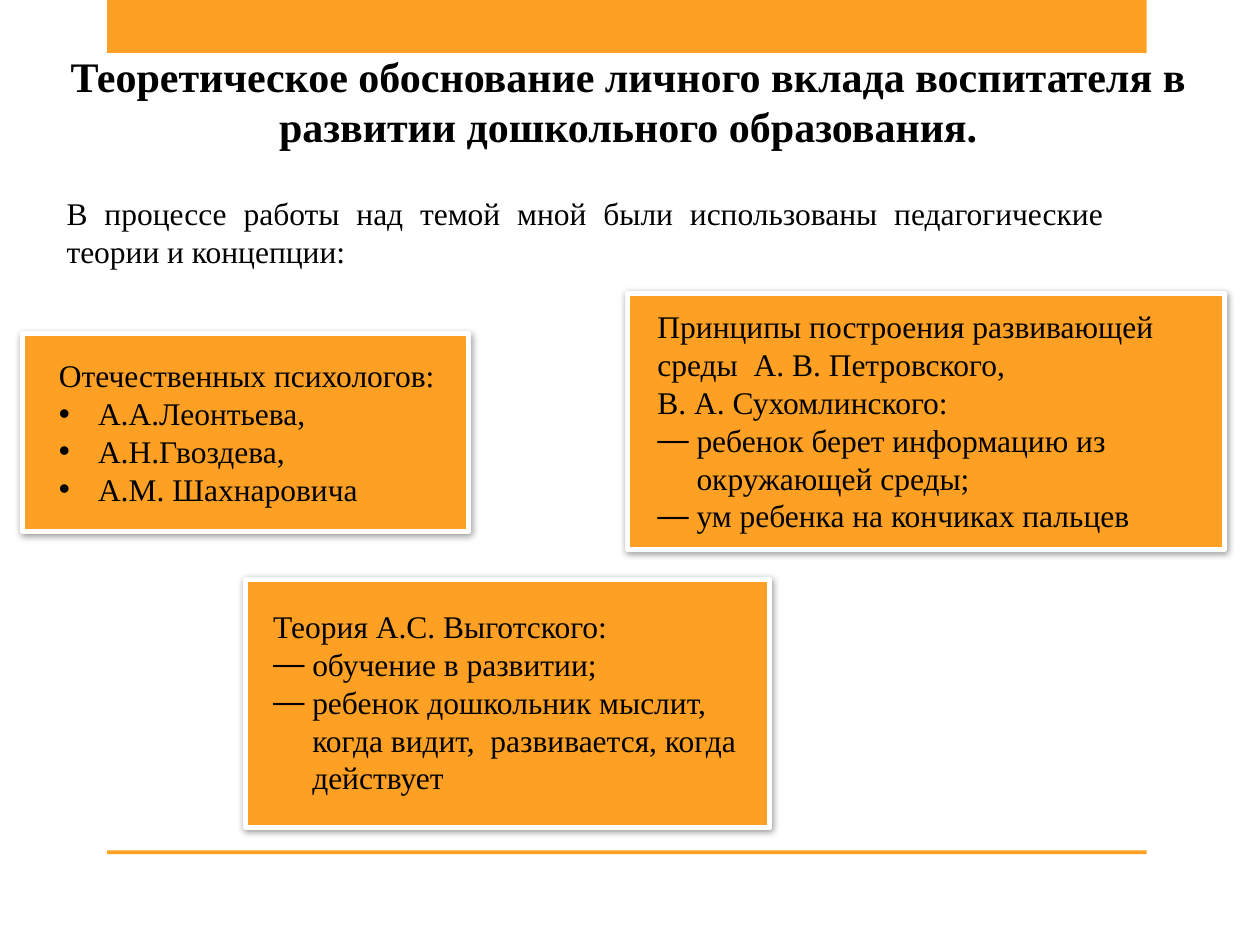
from lxml import etree
from pptx import Presentation
from pptx.dml.color import RGBColor
from pptx.enum.shapes import MSO_SHAPE as Shape
from pptx.enum.text import MSO_AUTO_SIZE as AutoSize, PP_ALIGN as Align
from pptx.oxml import parse_xml
from pptx.oxml.ns import nsdecls, qn
from pptx.util import Inches, Pt

ORANGE = RGBColor(0xFD, 0xA0, 0x23)
WHITE = RGBColor(0xFF, 0xFF, 0xFF)
BLACK = RGBColor(0x00, 0x00, 0x00)
INDENT = Inches(0.31)
SHADOW = (
    f'<a:effectLst {nsdecls("a")}>'
    f'<a:outerShdw blurRad="{Pt(4)}" dist="{Pt(1)}" dir="{88 * 60000}" rotWithShape="0">'
    '<a:srgbClr val="000000"><a:alpha val="40000"/></a:srgbClr>'
    '</a:outerShdw></a:effectLst>'
)


class SlideBuilder:
    """Holds the text style and the current slide."""

    def __init__(self, slide):
        self.s = slide
        self.font = {"name": "Times New Roman", "size": Pt(18), "bold": False}

    def rect(self, at, shapes=None):
        shapes = shapes or self.s.shapes
        sp = shapes.add_shape(Shape.RECTANGLE, *map(Inches, at))
        sp.shadow.inherit = False
        sp.fill.solid()
        sp.fill.fore_color.rgb = ORANGE
        sp.line.fill.background()
        return sp

    def text(self, at, lines, bullet="", items=(), align=Align.LEFT, shapes=None, **fmt):
        shapes = shapes or self.s.shapes
        tf = shapes.add_textbox(*map(Inches, at)).text_frame
        tf.word_wrap = True
        tf.auto_size = AutoSize.SHAPE_TO_FIT_TEXT
        for i, line in enumerate([*lines, *items]):
            p = tf.paragraphs[0] if i == 0 else tf.add_paragraph()
            p.alignment = align
            if i >= len(lines):
                self.bullet(p, bullet)
            r = p.add_run()
            r.text = line
            for key, value in {**self.font, **fmt}.items():
                setattr(r.font, key, value)
            r.font.color.rgb = BLACK

    def bullet(self, p, char):
        pPr = p._p.get_or_add_pPr()
        pPr.set("marL", str(INDENT))
        pPr.set("indent", str(-INDENT))
        etree.SubElement(pPr, qn("a:buFont"), typeface="Arial")
        etree.SubElement(pPr, qn("a:buChar"), char=char)

    def card(self, box_at, text_at, lines, bullet, items):
        shapes = self.s.shapes.add_group_shape().shapes
        sp = self.rect(box_at, shapes)
        sp.line.color.rgb = WHITE
        sp.line.width = Pt(2.75)
        spPr = sp._element.spPr
        spPr.replace(spPr.find(qn("a:effectLst")), parse_xml(SHADOW))
        self.text(text_at, lines, bullet, items, shapes=shapes)


def main():
    prs = Presentation()
    prs.slide_width, prs.slide_height = Inches(10), Inches(7.5)
    b = SlideBuilder(prs.slides.add_slide(prs.slide_layouts[6]))

    # Top band and bottom rule
    for top, height in ((0, 0.42), (6.75, 0.03)):
        b.rect((0.85, top, 8.25, height))

    # Title and introduction
    b.text((0.14, 0.35, 9.69, 0.91),
           ["Теоретическое обоснование личного вклада воспитателя в развитии "
            "дошкольного образования."],
           align=Align.CENTER, size=Pt(24), bold=True)
    b.text((0.43, 1.49, 8.43, 0.71),
           ["В процессе работы над темой мной были использованы педагогические "
            "теории и концепции:"],
           align=Align.JUSTIFY)

    # Theory cards
    b.card((0.18, 2.65, 3.54, 1.57), (0.37, 2.78, 3.36, 1.31),
           ["Отечественных психологов:"],
           "•", ["А.А.Леонтьева,", "А.Н.Гвоздева,", "А.М. Шахнаровича"])
    b.card((4.98, 2.33, 4.74, 2.03), (5.12, 2.39, 4.33, 1.92),
           ["Принципы построения развивающей среды  А. В. Петровского,",
            "В. А. Сухомлинского:"],
           "―", ["ребенок берет информацию из окружающей среды;",
                 "ум ребенка на кончиках пальцев"])
    b.card((1.95, 4.6, 4.16, 1.97), (2.07, 4.77, 3.98, 1.61),
           ["Теория А.С. Выготского:"],
           "―", ["обучение в развитии;",
                 "ребенок дошкольник мыслит, когда видит,  развивается, когда действует"])

    prs.save("out.pptx")


if __name__ == "__main__":
    main()
